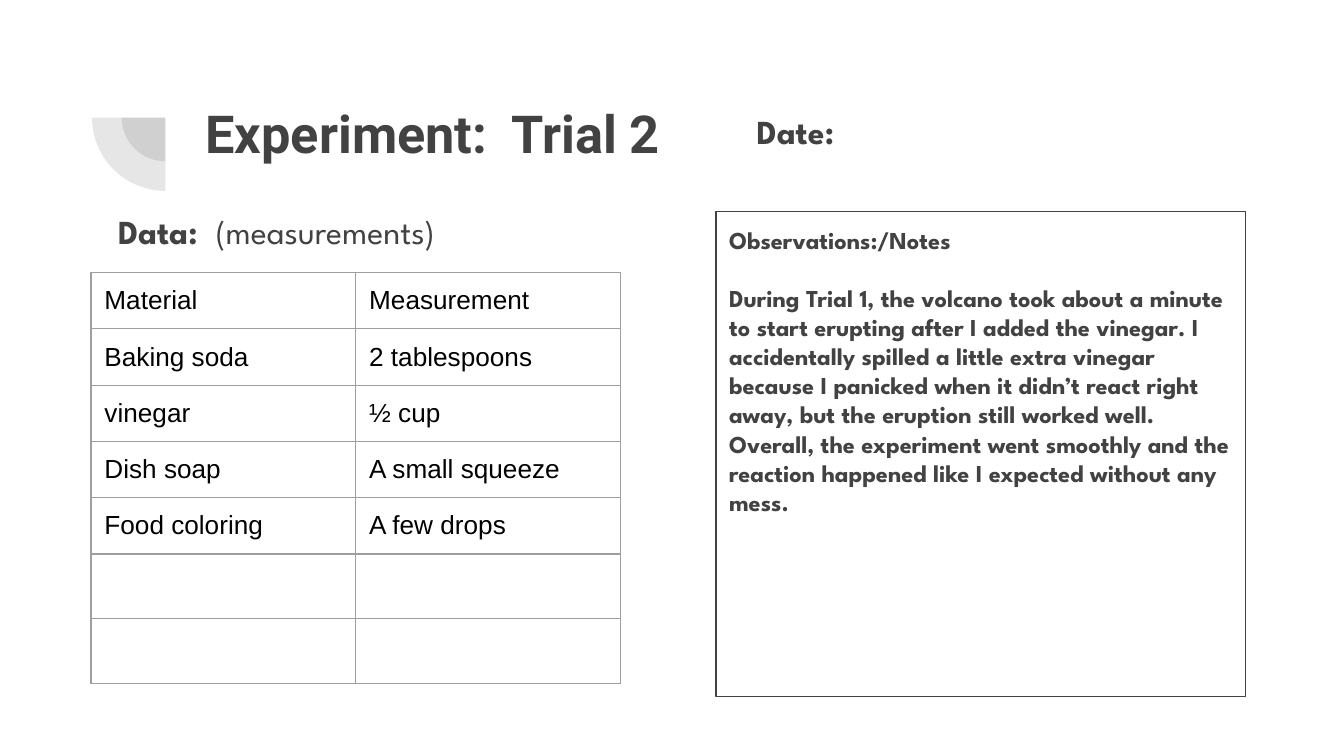
from dataclasses import dataclass

from lxml import etree
from pptx import Presentation
from pptx.dml.color import RGBColor
from pptx.enum.shapes import MSO_SHAPE
from pptx.enum.text import MSO_ANCHOR, MSO_AUTO_SIZE, PP_ALIGN
from pptx.oxml.ns import qn
from pptx.util import Inches, Pt

PIE, RECT = MSO_SHAPE.PIE, MSO_SHAPE.RECTANGLE
TOP = MSO_ANCHOR.TOP
LEFT = PP_ALIGN.LEFT
NO_FIT = MSO_AUTO_SIZE.NONE
WIDTH = Inches(10)
HEIGHT = WIDTH * 9 // 16
GRID_COLUMNS = 100
SIDES = ("a:lnL", "a:lnR", "a:lnT", "a:lnB")

MEASUREMENTS = [
    ("Material", "Measurement"),
    ("Baking soda", "2 tablespoons"),
    ("vinegar", "½ cup"),
    ("Dish soap", "A small squeeze"),
    ("Food coloring", "A few drops"),
    ("", ""),
    ("", ""),
]
NOTES = (
    "During Trial 1, the volcano took about a minute to start erupting after I "
    "added the vinegar. I accidentally spilled a little extra vinegar because I "
    "panicked when it didn’t react right away, but the eruption still worked "
    "well. Overall, the experiment went smoothly and the reaction happened like "
    "I expected without any mess."
)


@dataclass(frozen=True)
class Theme:
    """Colours, fonts and type sizes of the slide."""
    ink: str = "424242"
    cell_ink: str = "000000"
    border: str = "9E9E9E"
    title_font: str = "Roboto"
    label_font: str = "League Spartan"
    cell_font: str = "Arial"
    title: int = 28
    label: int = 18
    notes: int = 13
    cell: int = 14
    empty_cell: int = 18
    rule: float = 0.75
    alpha: int = 13


THEME = Theme()


def grid(*cells):
    """Turn grid units, each a hundredth of the slide's width, into lengths."""
    return [int(WIDTH * c / GRID_COLUMNS) for c in cells]


def style_run(r, font, size, color, bold=False):
    """Format one run."""
    r.font.name, r.font.size, r.font.bold = font, Pt(size), bold
    r.font.color.rgb = RGBColor.from_string(color)


def set_frame(tf):
    """Give a text frame even insets, wrapping and a fixed size."""
    tf.word_wrap, tf.auto_size, tf.vertical_anchor = True, NO_FIT, TOP
    tf.margin_left = tf.margin_right = tf.margin_top = tf.margin_bottom = grid(1)[0]


def add_pie(s, cx, cy, radius):
    """Add a translucent quarter disc around a centre."""
    sp = s.shapes.add_shape(
        PIE, *grid(cx - radius, cy - radius, 2 * radius, 2 * radius))
    sp.adjustments[0], sp.adjustments[1] = 108, 162
    sp.rotation = 270
    sp.shadow.inherit = False
    sp.line.fill.background()
    sp.fill.solid()
    sp.fill.fore_color.rgb = RGBColor.from_string(THEME.ink)
    color = sp._element.spPr.find(".//" + qn("a:srgbClr"))
    etree.SubElement(color, qn("a:alpha"), val=str(THEME.alpha * 1000))


def set_title(s, text, box):
    """Place and format the title placeholder in front of the discs."""
    sp = s.shapes.title
    sp.left, sp.top, sp.width, sp.height = grid(*box)
    s.shapes._spTree.append(sp._element)
    tf = sp.text_frame
    tf.text = text
    set_frame(tf)
    p = tf.paragraphs[0]
    p.alignment = LEFT
    style_run(p.runs[0], THEME.title_font, THEME.title, THEME.ink, True)


def add_label(s, box, bold, plain=""):
    """Add a label with a bold lead and an optional plain ending."""
    tf = s.shapes.add_textbox(*grid(*box)).text_frame
    set_frame(tf)
    for text, is_bold in ((bold, True), (plain, False)):
        if text:
            r = tf.paragraphs[0].add_run()
            r.text = text
            style_run(r, THEME.label_font, THEME.label, THEME.ink, is_bold)


def add_notes(s, box, heading, body):
    """Add the outlined notes panel."""
    sp = s.shapes.add_shape(RECT, *grid(*box))
    sp.shadow.inherit = False
    sp.fill.background()
    sp.line.color.rgb = RGBColor.from_string(THEME.ink)
    sp.line.width = Pt(THEME.rule)
    tf = sp.text_frame
    tf.text = f"{heading}\n{body}"
    set_frame(tf)
    for p in tf.paragraphs:
        p.alignment = LEFT
        style_run(p.runs[0], THEME.label_font, THEME.notes, THEME.ink, True)
    tf.paragraphs[1].space_before = Pt(THEME.notes * 1.2)


def set_borders(cell):
    """Draw a thin line on each side of a cell."""
    tc_pr = cell._tc.get_or_add_tcPr()
    for i, side in enumerate(SIDES):
        ln = etree.Element(qn(side), w=str(Pt(THEME.rule)))
        fill = etree.SubElement(ln, qn("a:solidFill"))
        etree.SubElement(fill, qn("a:srgbClr"), val=THEME.border)
        tc_pr.insert(i, ln)


def fill_cell(cell, text):
    """Write and format one table cell."""
    cell.margin_left = cell.margin_right = grid(1)[0]
    cell.margin_top = cell.margin_bottom = grid(1)[0]
    cell.fill.background()
    set_borders(cell)
    p = cell.text_frame.paragraphs[0]
    if text:
        p.text = text
        style_run(p.runs[0], THEME.cell_font, THEME.cell, THEME.cell_ink)
    else:
        end = etree.SubElement(
            p._p, qn("a:endParaRPr"), sz=str(THEME.empty_cell * 100))
        etree.SubElement(end, qn("a:latin"), typeface=THEME.cell_font)


def add_measurements(s, left, top, column, row, data):
    """Add the table of materials with equal columns and rows."""
    rows, cols = len(data), len(data[0])
    table = s.shapes.add_table(
        rows, cols, *grid(left, top, column * cols, row * rows)).table
    table.first_row = table.horz_banding = False
    for i, texts in enumerate(data):
        for j, text in enumerate(texts):
            fill_cell(table.cell(i, j), text)


def main():
    """Build the slide and save it."""
    prs = Presentation()
    prs.slide_width, prs.slide_height = WIDTH, HEIGHT
    s = prs.slides.add_slide(prs.slide_layouts[5])
    for radius in (3.25, 5.45):
        add_pie(s, 12.3, 8.75, radius)
    set_title(s, "Experiment:  Trial 2", (14.3, 6.5, 40.5, 7.1))
    add_notes(s, (53.27, 15.73, 39.4, 36.1), "Observations:/Notes", NOTES)
    add_label(s, (7.8, 14.7, 42.2, 4.5), "Data:  ", "(measurements)")
    add_measurements(s, 6.77, 20.28, 19.7, 4.17, MEASUREMENTS)
    add_label(s, (55.32, 7.23, 42.2, 4.5), "Date:")
    prs.save("out.pptx")


if __name__ == "__main__":
    main()
